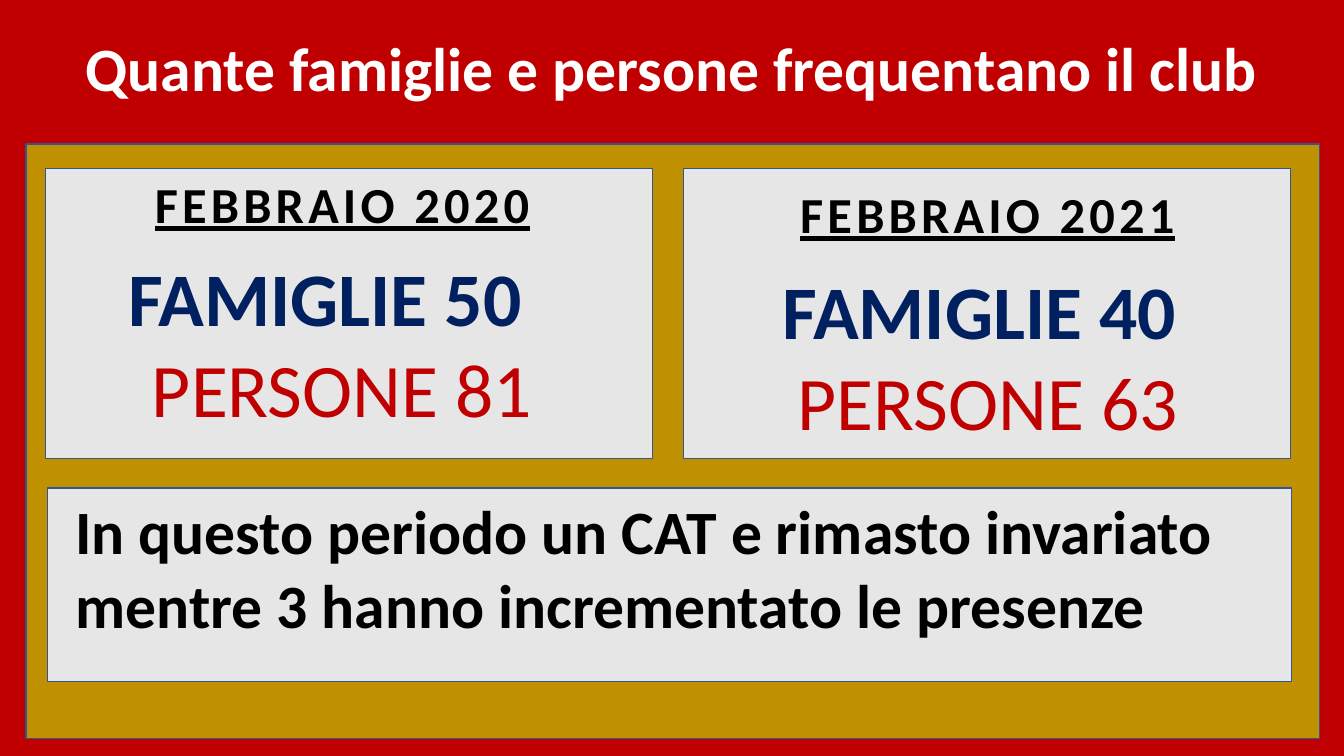
from pptx import Presentation
from pptx.dml.color import RGBColor
from pptx.enum.shapes import MSO_SHAPE as Shape
from pptx.enum.text import MSO_AUTO_SIZE as AutoSize, PP_ALIGN as Align
from pptx.util import Inches, Pt

RED, GOLD, GREY, BLUE = "C00000", "BF9000", "E7E6E6", "325491"
NAVY, BLACK, WHITE = "002060", "000000", "FFFFFF"

TITLE = "Quante famiglie e persone frequentano il club"
NOTE = "In questo periodo un CAT e rimasto invariato mentre 3 hanno incrementato le presenze"
PERIODS = [
    {"month": "FEBBRAIO 2020", "families": "FAMIGLIE 50", "people": "PERSONE 81",
     "card": 0.45, "month_box": (1.38, 1.67, 4.03, 0.71),
     "count_box": (0.71, 2.44, 5.37, 1.92), "people_indent": 0.34},
    {"month": "FEBBRAIO 2021", "families": "FAMIGLIE 40", "people": "PERSONE 63",
     "card": 6.78, "month_box": (7.67, 1.77, 4.25, 0.71),
     "count_box": (6.89, 2.57, 5.82, 1.92), "people_indent": 0.17},
]
CARD_TOP, CARD_WIDTH, CARD_HEIGHT = 1.67, 6.02, 2.88


def color(value):
    return RGBColor.from_string(value)


def add_panel(slide, box, fill):
    shape = slide.shapes.add_shape(Shape.RECTANGLE, *map(Inches, box))
    shape.shadow.inherit = False
    shape.fill.solid()
    shape.fill.fore_color.rgb = color(fill)
    shape.line.color.rgb = color(BLUE)
    shape.line.width = Pt(1)


def add_text_box(slide, box, right_inset=0.1):
    frame = slide.shapes.add_textbox(*map(Inches, box)).text_frame
    frame.word_wrap = True
    frame.auto_size = AutoSize.SHAPE_TO_FIT_TEXT
    frame.margin_right = Inches(right_inset)
    return frame


def write(paragraph, text, size=44, fill=BLACK, bold=True, underline=False,
          spacing=0, indent=0, align=Align.CENTER):
    paragraph.alignment = align
    if indent:
        paragraph._p.get_or_add_pPr().set("marL", str(Inches(indent)))
    run = paragraph.add_run()
    run.text = text
    font = run.font
    font.name, font.size, font.bold = "Calibri", Pt(size), bold
    font.color.rgb = color(fill)
    if underline:
        font.underline = True
    if spacing:
        font._element.set("spc", str(spacing * 100))


def main():
    presentation = Presentation()
    presentation.slide_width = Inches(13.33)
    presentation.slide_height = Inches(7.5)
    slide = presentation.slides.add_slide(presentation.slide_layouts[6])
    slide.background.fill.solid()
    slide.background.fill.fore_color.rgb = color(RED)

    add_panel(slide, (0.26, 1.43, 12.83, 5.9), GOLD)
    title = add_text_box(slide, (0.42, 0.25, 12.49, 0.84))
    write(title.paragraphs[0], TITLE, fill=WHITE)

    for period in PERIODS:
        add_panel(slide, (period["card"], CARD_TOP, CARD_WIDTH, CARD_HEIGHT), GREY)
        indent = period["people_indent"]
        counts = add_text_box(slide, period["count_box"], right_inset=0.1 + indent)
        write(counts.paragraphs[0], period["families"], size=54, fill=NAVY)
        write(counts.add_paragraph(), period["people"], size=54, fill=RED,
              bold=False, indent=indent)
        month = add_text_box(slide, period["month_box"])
        write(month.paragraphs[0], period["month"], size=36, underline=True, spacing=3)

    add_panel(slide, (0.47, 4.84, 12.34, 1.92), GREY)
    note = add_text_box(slide, (0.65, 4.84, 11.95, 1.58))
    write(note.paragraphs[0], NOTE, align=Align.LEFT)

    presentation.save("out.pptx")


if __name__ == "__main__":
    main()
